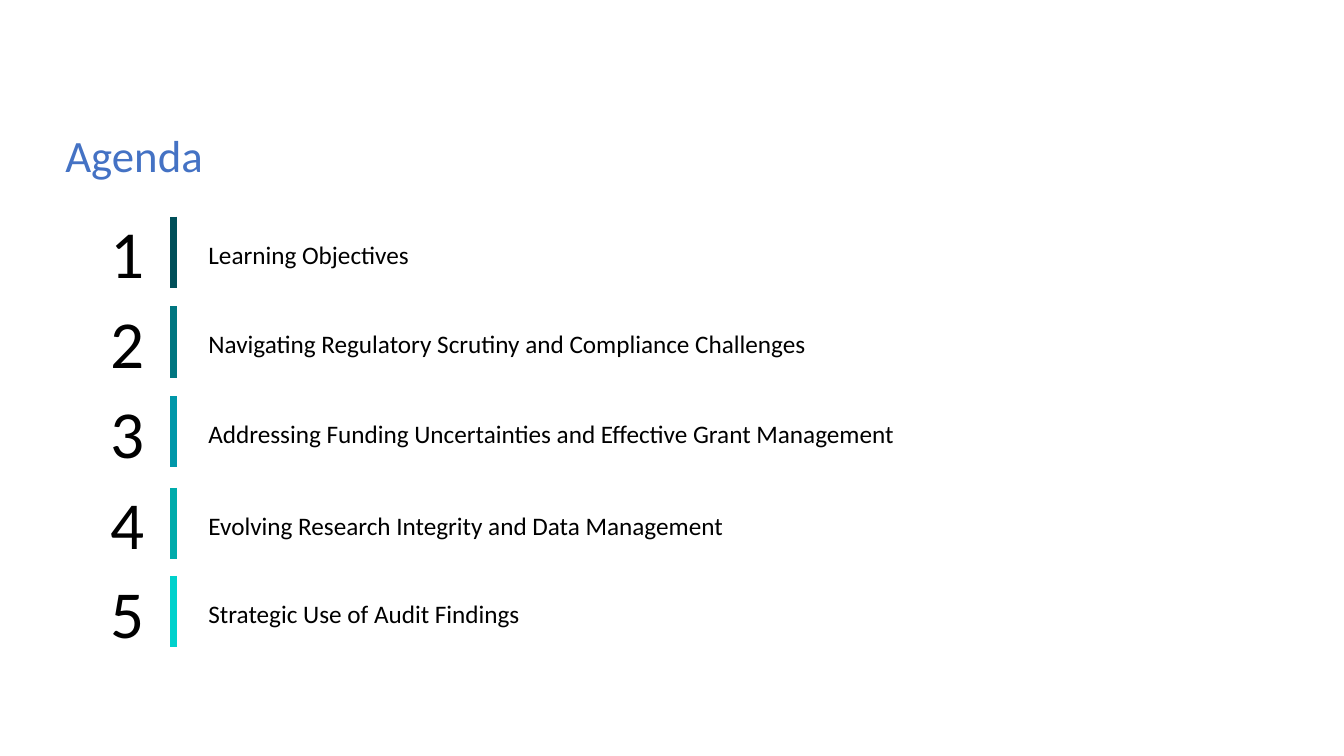
from dataclasses import dataclass

from lxml import etree
from pptx import Presentation
from pptx.dml.color import RGBColor
from pptx.enum.shapes import MSO_CONNECTOR
from pptx.enum.text import MSO_ANCHOR, MSO_AUTO_SIZE
from pptx.oxml.ns import qn
from pptx.util import Pt

STRAIGHT = MSO_CONNECTOR.STRAIGHT
TOP = MSO_ANCHOR.TOP
GROW = MSO_AUTO_SIZE.SHAPE_TO_FIT_TEXT


@dataclass(frozen=True)
class Theme:
    font: str = "Calibri"
    title: str = "4472C4"
    ink: str = "000000"
    bars: tuple = ("004F59", "007680", "0097A9", "00ABAB", "00D1CC")
    title_size: int = 32
    number_size: int = 48
    label_size: int = 18
    bar_width: int = 5


theme = Theme()


def add_text(shapes, text, left, top, width, height, size, color):
    box = shapes.add_textbox(Pt(left), Pt(top), Pt(width), Pt(height))
    frame = box.text_frame
    frame.vertical_anchor = TOP
    line = frame.paragraphs[0]
    line.text = text
    line.font.name = theme.font
    line.font.size = Pt(size)
    line.font.color.rgb = RGBColor.from_string(color)
    return frame, line


deck = Presentation()
deck.slide_width, deck.slide_height = Pt(960), Pt(540)
slide = deck.slides.add_slide(deck.slide_layouts[6])

frame, title = add_text(slide.shapes, "Agenda", 39.6, 92.2, 881.3, 35.3,
                        theme.title_size, theme.title)
frame.word_wrap = True
title.line_spacing = 0.9

# Row top, label width, label
topics = [
    (147.6, 159.8, "Learning Objectives"),
    (211.7, 446.4, "Navigating Regulatory Scrutiny and Compliance Challenges"),
    (275.8, 510.5, "Addressing Funding Uncertainties and Effective Grant Management"),
    (341.3, 386.6, "Evolving Research Integrity and Data Management"),
    (404.2, 239, "Strategic Use of Audit Findings"),
]
bar_x, bar_drop, bar_height = 123.8, 7.2, 50.8
label_drop = 19.6

for number, ((top, width, label), color) in enumerate(zip(topics, theme.bars), 1):
    row = slide.shapes.add_group_shape().shapes
    texts = [
        (str(number), 72, top, 38.9, 65.5, theme.number_size),
        (label, 141.8, top + label_drop, width, 29, theme.label_size),
    ]
    for item in texts:
        frame, _ = add_text(row, *item, theme.ink)
        frame.word_wrap = False
        frame.auto_size = GROW

    start = top + bar_drop
    bar = row.add_connector(STRAIGHT, Pt(bar_x), Pt(start),
                            Pt(bar_x), Pt(start + bar_height))
    bar.line.color.rgb = RGBColor.from_string(color)
    bar.line.width = Pt(theme.bar_width)
    etree.SubElement(bar._element.spPr, qn("a:effectLst"))

deck.save("out.pptx")
